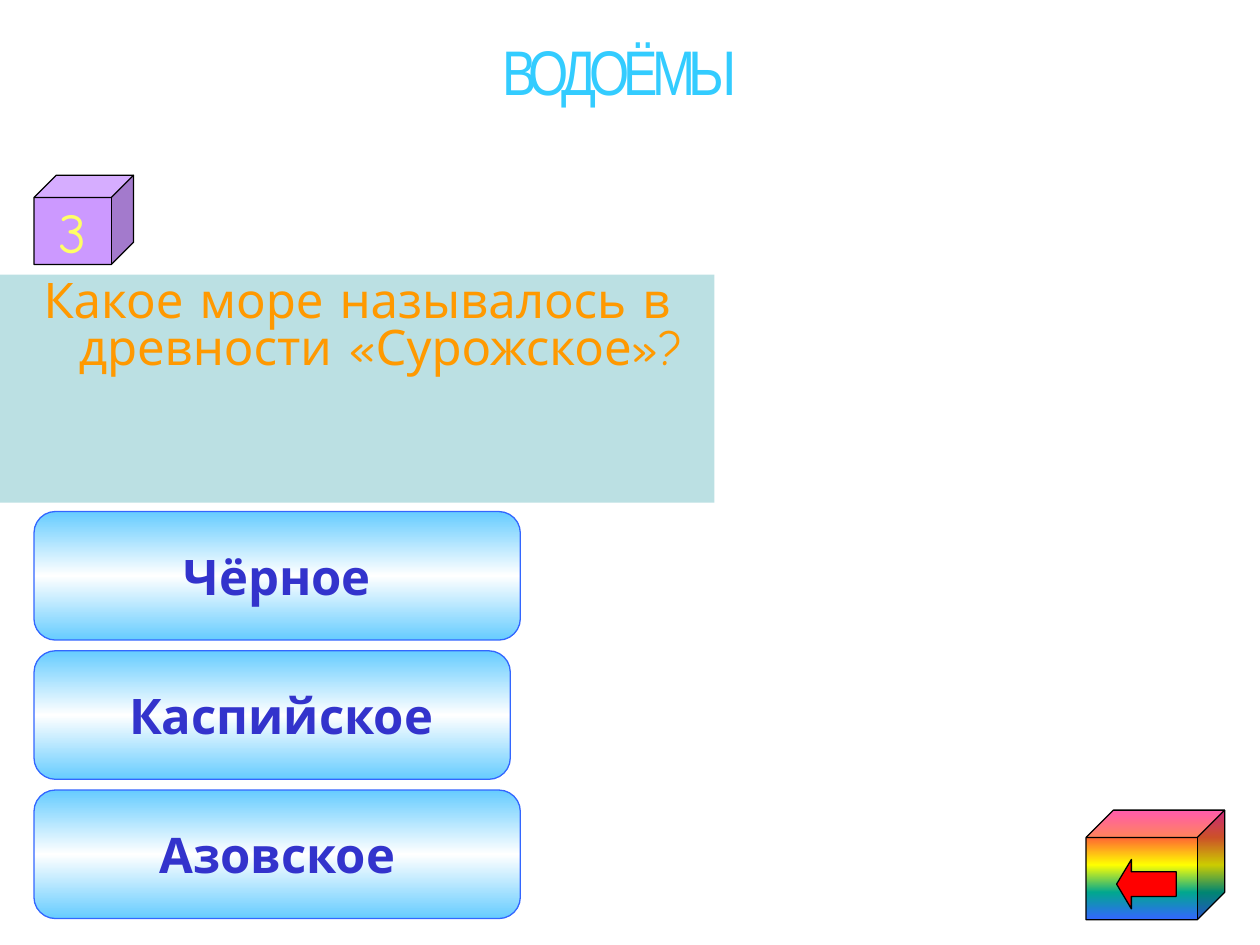
from dataclasses import dataclass

from lxml.etree import SubElement
from pptx import Presentation
from pptx.dml.color import RGBColor
from pptx.enum.shapes import MSO_SHAPE
from pptx.enum.text import MSO_ANCHOR, PP_ALIGN
from pptx.oxml.ns import qn
from pptx.util import Inches, Pt

COLS, ROWS = 100, 75
CELL = Inches(10) // COLS


@dataclass(frozen=True)
class Theme:
    body_font: str = "Comic Neue"
    title_font: str = "Arial Narrow"
    body_size: int = 28
    number_size: int = 32
    title_size: int = 36
    line_width: float = 0.75
    title: str = "33CCFF"
    title_edge: str = "000099"
    panel: str = "BBE0E3"
    question: str = "FF9900"
    answer: str = "3333CC"
    answer_line: str = "3366FF"
    number: str = "FFFF66"
    number_cube: str = "CC99FF"
    arrow: str = "FF0000"
    black: str = "000000"
    answer_fill: tuple = ("66CCFF", "FFFFFF", "66CCFF")
    rainbow: tuple = ("FF3399", "FF6633", "FFFF00", "01A78F", "3366FF")


THEME = Theme()


def rgb(color):
    return RGBColor.from_string(color)


def cells(*values):
    return [round(v * CELL) for v in values]


def fill_gradient(sp, colors):
    """Fill from top to bottom with evenly spaced colours."""
    sp.fill.gradient()
    sp.fill.gradient_angle = 270
    stops = sp._element.spPr.find(qn("a:gradFill")).find(qn("a:gsLst"))
    for stop in list(stops):
        stops.remove(stop)
    for i, color in enumerate(colors):
        pos = round(100000 * i / (len(colors) - 1))
        stop = SubElement(stops, qn("a:gs"), pos=str(pos))
        SubElement(stop, qn("a:srgbClr"), val=color)


def add_box(shapes, kind, box, fill, line=None, adj=()):
    """Add a preset shape; a tuple as fill means a gradient."""
    sp = shapes.add_shape(kind, *cells(*box))
    sp.shadow.inherit = False
    for i, value in enumerate(adj):
        sp.adjustments[i] = value
    if isinstance(fill, tuple):
        fill_gradient(sp, fill)
    else:
        sp.fill.solid()
        sp.fill.fore_color.rgb = rgb(fill)
    if line:
        sp.line.color.rgb = rgb(line)
        sp.line.width = Pt(THEME.line_width)
    else:
        sp.line.fill.background()
    return sp


def write(sp, text, color, size=THEME.body_size, font=THEME.body_font,
          bold=False, wrap=False, anchor=MSO_ANCHOR.MIDDLE):
    tf = sp.text_frame
    tf.word_wrap = wrap
    tf.vertical_anchor = anchor
    p = tf.paragraphs[0]
    p.alignment = PP_ALIGN.CENTER
    r = p.add_run()
    r.text = text
    r.font.name = font
    r.font.size = Pt(size)
    r.font.bold = bold
    r.font.color.rgb = rgb(color)
    return p


def add_title(slide, box, text):
    sp = slide.shapes.add_textbox(*cells(*box))
    p = write(sp, text, THEME.title, THEME.title_size, THEME.title_font,
              anchor=MSO_ANCHOR.TOP)
    rPr = p.runs[0].font._element
    rPr.set("spc", "-360")
    ln = SubElement(rPr, qn("a:ln"), w=str(Pt(1)))
    SubElement(SubElement(ln, qn("a:solidFill")), qn("a:srgbClr"),
               val=THEME.title_edge)
    rPr.insert(0, ln)


def add_question(slide, box, text):
    sp = add_box(slide.shapes, MSO_SHAPE.RECTANGLE, box, THEME.panel)
    p = write(sp, text, THEME.question, wrap=True, anchor=MSO_ANCHOR.TOP)
    p.line_spacing = 0.8
    pPr = p._p.get_or_add_pPr()
    indent = Inches(0.38)
    pPr.set("marL", str(indent))
    pPr.set("indent", str(-indent))


def add_number(slide, box, text):
    sp = add_box(slide.shapes, MSO_SHAPE.CUBE, box, THEME.number_cube,
                 THEME.black, [0.25])
    write(sp, text, THEME.number, THEME.number_size)


def add_answers(slide, box, answers):
    """Stack the answers; each has a text, a narrowing and a text shift."""
    x, y, w, h = box
    gap = 0.85
    row = (h - gap * (len(answers) - 1)) / len(answers)
    for i, (text, narrower, shift) in enumerate(answers):
        place = (x, y + i * (row + gap), w - narrower, row)
        sp = add_box(slide.shapes, MSO_SHAPE.ROUNDED_RECTANGLE, place,
                     THEME.answer_fill, THEME.answer_line, [0.167])
        write(sp, text, THEME.answer, bold=True)
        sp.text_frame.margin_left += round(2 * shift * CELL)


def add_back_button(slide, box):
    x, y, w, h = box
    shapes = slide.shapes.add_group_shape().shapes
    add_box(shapes, MSO_SHAPE.CUBE, box, THEME.rainbow, THEME.black, [0.25])
    arrow = (x + 0.22 * w, y + 0.45 * h, 0.43 * w, 0.45 * h)
    add_box(shapes, MSO_SHAPE.LEFT_ARROW, arrow, THEME.arrow, THEME.black,
            [0.5, 0.3])


def main():
    prs = Presentation()
    prs.slide_width, prs.slide_height = cells(COLS, ROWS)
    slide = prs.slides.add_slide(prs.slide_layouts[6])
    add_question(slide, (0, 21.8, 56.7, 18.1),
                 "Какое море называлось в древности «Сурожское»?")
    add_answers(slide, (2.7, 40.6, 38.6, 32.3),
                [("Чёрное", 0, 0), ("Каспийское", 0.8, 0.7),
                 ("Азовское", 0, 0)])
    add_back_button(slide, (86.2, 64.3, 11, 8.7))
    add_number(slide, (2.7, 13.9, 7.9, 7.1), "3")
    add_title(slide, (12.2, 2.1, 74, 12.7), "ВОДОЁМЫ")
    prs.save("out.pptx")


if __name__ == "__main__":
    main()
